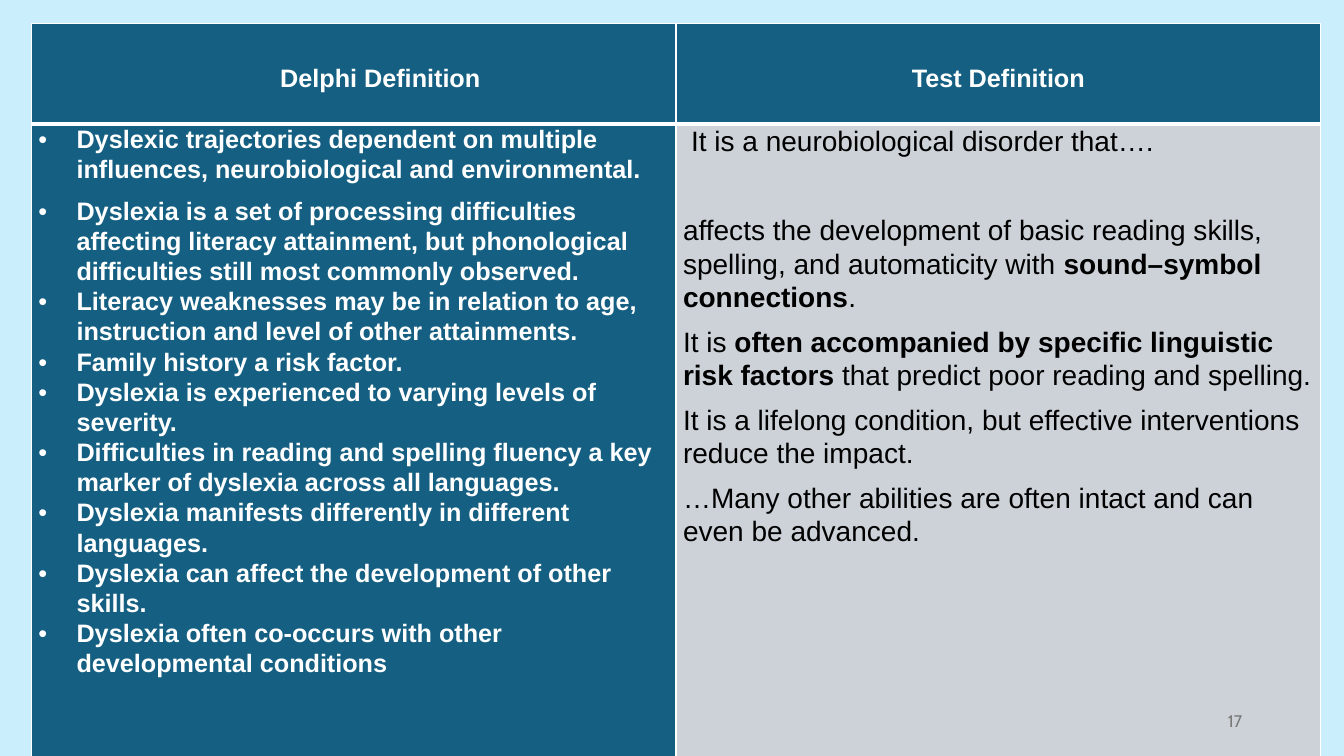
from lxml.etree import SubElement, Element
from pptx import Presentation
from pptx.dml.color import RGBColor
from pptx.enum.text import MSO_ANCHOR, PP_ALIGN
from pptx.oxml.ns import qn
from pptx.util import Inches, Pt

COLORS = {
    "sky": "CAEEFB",
    "teal": "156082",
    "gray": "CCD2D8",
    "white": "FFFFFF",
    "black": "000000",
    "number": "797979",
}
W, H = 13.33, 7.5
HEADERS = ["Delphi Definition", "Test Definition"]
DELPHI = [
    "Dyslexic trajectories dependent on multiple influences, neurobiological and environmental.",
    "Dyslexia is a set of processing difficulties affecting literacy attainment, "
    "but phonological difficulties still most commonly observed.",
    "Literacy weaknesses may be in relation to age, instruction and level of other attainments.",
    "Family history a risk factor.",
    "Dyslexia is experienced to varying levels of severity.",
    "Difficulties in reading and spelling fluency a key marker of dyslexia across all languages.",
    "Dyslexia manifests differently in different languages.",
    "Dyslexia can affect the development of other skills.",
    "Dyslexia often co-occurs with other developmental conditions",
]
TEST = [
    [("It is a neurobiological disorder that….", False)],
    [("affects the development of basic reading skills, spelling, and automaticity with ", False),
     ("sound–symbol connections", True), (".", False)],
    [("It is ", False), ("often accompanied by specific linguistic risk factors ", True),
     ("that predict poor reading and spelling.", False)],
    [("It is a lifelong condition, but effective interventions reduce the impact.", False)],
    [("…Many other abilities are often intact and can even be advanced.", False)],
]


def rgb(name):
    return RGBColor.from_string(COLORS[name])


def style_run(r, size, color, bold=False, font="Arial"):
    r.font.name, r.font.size, r.font.bold = font, Pt(size), bold
    r.font.color.rgb = rgb(color)


def style_cell(cell, fill, top, bottom):
    cell.margin_left = cell.margin_right = Inches(0.07)
    cell.margin_top = cell.margin_bottom = 0
    cell.fill.solid()
    cell.fill.fore_color.rgb = rgb(fill)
    tcPr = cell._tc.get_or_add_tcPr()
    for i, (side, width) in enumerate([("L", 1), ("R", 1), ("T", top), ("B", bottom)]):
        ln = Element(qn(f"a:ln{side}"), w=str(Pt(width)))
        SubElement(SubElement(ln, qn("a:solidFill")), qn("a:srgbClr"), val=COLORS["white"])
        tcPr.insert(i, ln)


def add_paragraph(tf, i, runs, size, color, after=8):
    p = tf.paragraphs[0] if i == 0 else tf.add_paragraph()
    p.line_spacing, p.space_after = 1.07, Pt(after)
    for text, bold in runs:
        r = p.add_run()
        r.text = text
        style_run(r, size, color, bold)
    return p


def set_indent(p, left, first):
    pPr = p._p.get_or_add_pPr()
    pPr.set("marL", str(Inches(left)))
    pPr.set("indent", str(Inches(first)))
    return pPr


def fill_header(cell, text, indent):
    style_cell(cell, "teal", 1, 3)
    cell.margin_top = Inches(0.39)
    p = add_paragraph(cell.text_frame, 0, [(text, True)], 18, "white")
    p.alignment = PP_ALIGN.CENTER
    set_indent(p, indent, 0)


def fill_delphi(cell):
    style_cell(cell, "teal", 3, 1)
    for i, text in enumerate(DELPHI):
        after = 8 if i in (0, len(DELPHI) - 1) else 0
        p = add_paragraph(cell.text_frame, i, [(text, True)], 18, "white", after)
        pPr = set_indent(p, 0.38, -0.38)
        SubElement(pPr, qn("a:buFont"), typeface="Arial")
        SubElement(pPr, qn("a:buChar"), char="•")


def fill_test(cell):
    style_cell(cell, "gray", 3, 1)
    for i, runs in enumerate(TEST):
        p = add_paragraph(cell.text_frame, i, runs, 20, "black", 8 if i else 40)
        set_indent(p, 0, 0 if i else 0.08)


def add_definitions(s, x, y, w, h):
    header_h = 1
    table = s.shapes.add_table(2, 2, Inches(x), Inches(y), Inches(w), Inches(h)).table
    table.first_row = table.horz_banding = False
    for col in table.columns:
        col.width = Inches(w / 2)
    table.rows[0].height = Inches(header_h)
    table.rows[1].height = Inches(h - header_h)
    for i, (text, indent) in enumerate(zip(HEADERS, (0.53, 0))):
        fill_header(table.cell(0, i), text, indent)
    fill_delphi(table.cell(1, 0))
    fill_test(table.cell(1, 1))


def add_slide_number(s, x, y, w, h, number):
    tf = s.shapes.add_textbox(Inches(x), Inches(y), Inches(w), Inches(h)).text_frame
    tf.word_wrap = True
    tf.vertical_anchor = MSO_ANCHOR.MIDDLE
    tf.text = str(number)
    p = tf.paragraphs[0]
    p.alignment = PP_ALIGN.RIGHT
    style_run(p.runs[0], 12, "number", font="Cabin")


def main():
    prs = Presentation()
    prs.slide_width, prs.slide_height = Inches(W), Inches(H)
    s = prs.slides.add_slide(prs.slide_layouts[6])
    s.background.fill.solid()
    s.background.fill.fore_color.rgb = rgb("sky")
    add_definitions(s, 0.31, 0.23, 12.79, 7.73)
    add_slide_number(s, 9.42, 6.95, 3, 0.4, 17)
    prs.save("out.pptx")


if __name__ == "__main__":
    main()
